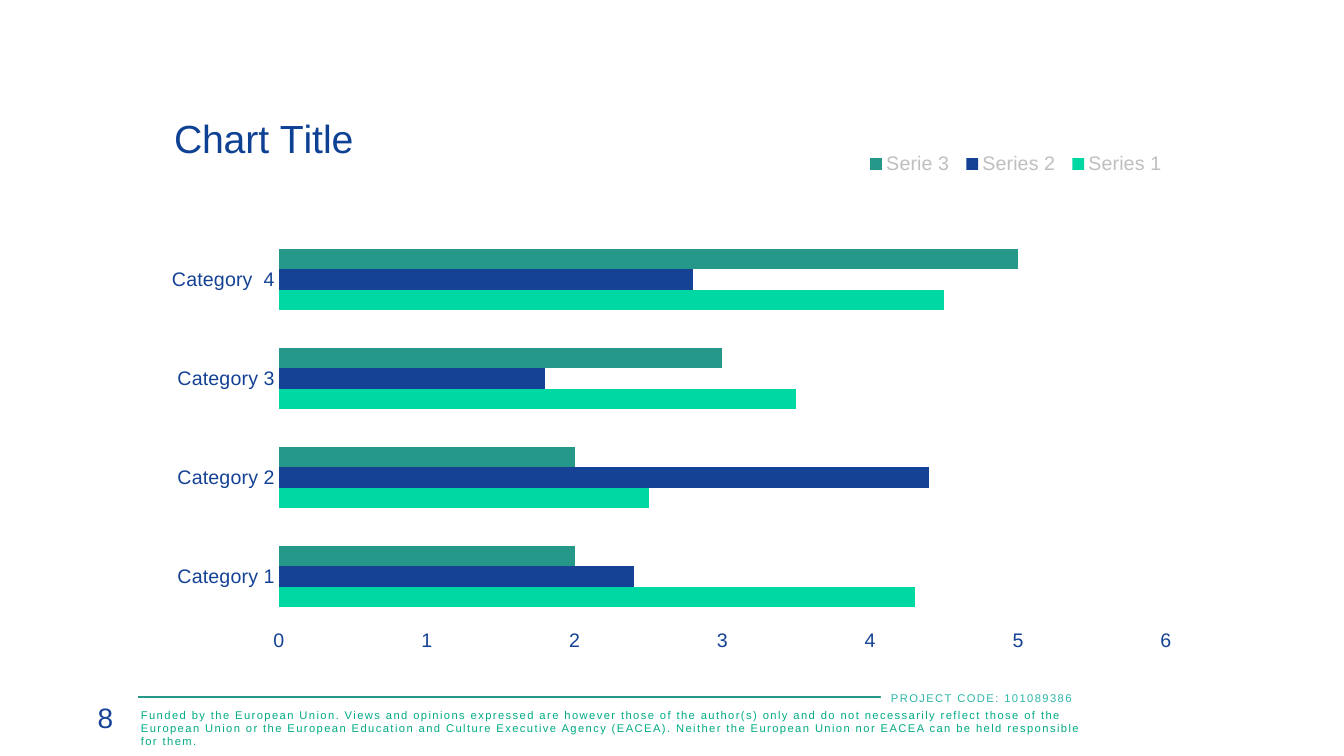
from typing import Any, NamedTuple

from lxml import etree
from pptx import Presentation
from pptx.chart.data import CategoryChartData
from pptx.dml.color import RGBColor
from pptx.enum.chart import XL_CHART_TYPE, XL_LEGEND_POSITION, XL_TICK_MARK
from pptx.enum.shapes import MSO_CONNECTOR, MSO_SHAPE
from pptx.enum.text import MSO_ANCHOR, PP_ALIGN
from pptx.oxml.ns import qn
from pptx.util import Emu, Pt

BAR = XL_CHART_TYPE.BAR_CLUSTERED
TOP = XL_LEGEND_POSITION.TOP
NO_TICK = XL_TICK_MARK.NONE
LINE = MSO_CONNECTOR.STRAIGHT
RECT = MSO_SHAPE.RECTANGLE
HIGH = MSO_ANCHOR.TOP
LEFT, RIGHT = PP_ALIGN.LEFT, PP_ALIGN.RIGHT

WHITE = RGBColor(0xFF, 0xFF, 0xFF)
NAVY = RGBColor(0x15, 0x42, 0x95)
BLUE = RGBColor(0x0E, 0x41, 0x94)
MINT = RGBColor(0x00, 0xD8, 0xA4)
TEAL = RGBColor(0x25, 0x98, 0x89)
GREEN = RGBColor(0x00, 0xAB, 0x84)
AQUA = RGBColor(0x2C, 0xB6, 0xA6)
GREY = RGBColor(0xBF, 0xBF, 0xBF)
FACE = "Arial"


class Box(NamedTuple):
    x: int
    y: int
    w: int
    h: int


class Note(NamedTuple):
    box: Box
    text: str
    size: int
    color: RGBColor
    align: PP_ALIGN = LEFT
    track: int = 0
    fill: RGBColor | None = None
    lead: float = 1.0
    after: int = 0


class Row(NamedTuple):
    name: str
    vals: tuple[float, ...]
    color: RGBColor


FUND = (
    "Funded by the European Union. Views and opinions expressed are however those of "
    "the author(s) only and do not necessarily reflect those of the European Union or "
    "the European Education and Culture Executive Agency (EACEA). Neither the European "
    "Union nor EACEA can be held responsible for them."
)
NOTES = (
    Note(Box(131, 703, 966, 50), FUND, 8, GREEN, track=100),
    Note(Box(27, 696, 96, 44), "8", 20, NAVY, RIGHT),
    Note(Box(881, 685, 225, 24), "PROJECT CODE: 101089386", 8, AQUA,
         track=100, fill=WHITE, lead=1.07, after=6),
)
GROUPS = ("Category 1", "Category 2", "Category 3", "Category  4")
ROWS = (
    Row("Series 1", (4.3, 2.5, 3.5, 4.5), MINT),
    Row("Series 2", (2.4, 4.4, 1.8, 2.8), NAVY),
    Row("Serie 3", (2, 2, 3, 5), TEAL),
)
CHART = Box(151, 98, 1042, 566)
TITLE = Box(167, 107, 180, 46)
KEY = Box(860, 148, 312, 32)
PLOT = Box(279, 230, 887, 396)


def px(n: int) -> Emu:
    return Emu(round(n * 914400 / 100.8))


def style(font: Any, size: int, color: RGBColor) -> None:
    font.name = FACE
    font.size = Pt(size)
    font.bold = False
    font.color.rgb = color


def rule(slide: Any) -> None:
    y = px(697)
    line = slide.shapes.add_connector(LINE, px(138), y, px(1064), y)
    line.line.color.rgb = TEAL
    line.line.width = Pt(0.75)
    etree.SubElement(line._element.spPr, qn("a:effectLst"))


def write(slide: Any, note: Note) -> None:
    place = [px(n) for n in note.box]
    if note.fill is None:
        shape = slide.shapes.add_textbox(*place)
    else:
        shape = slide.shapes.add_shape(RECT, *place)
        shape.shadow.inherit = False
        shape.fill.solid()
        shape.fill.fore_color.rgb = note.fill
        shape.line.fill.background()
    frame = shape.text_frame
    frame.word_wrap = True
    frame.vertical_anchor = HIGH
    para = frame.paragraphs[0]
    para.alignment = note.align
    para.line_spacing = note.lead
    para.space_after = Pt(note.after)
    run = para.add_run()
    run.text = note.text
    style(run.font, note.size, note.color)
    if note.track:
        run._r.get_or_add_rPr().set("spc", str(note.track))


def pin(part: Any, box: Box, prior: str = "", inner: bool = False,
        sized: bool = True) -> None:
    for old in part.findall(qn("c:layout")):
        part.remove(old)
    layout = etree.Element(qn("c:layout"))
    manual = etree.SubElement(layout, qn("c:manualLayout"))
    items = [("layoutTarget", "inner")] if inner else []
    items += [("xMode", "edge"), ("yMode", "edge")]
    items += [("x", (box.x - CHART.x) / CHART.w), ("y", (box.y - CHART.y) / CHART.h)]
    if sized:
        items += [("w", box.w / CHART.w), ("h", box.h / CHART.h)]
    for tag, val in items:
        etree.SubElement(manual, qn(f"c:{tag}")).set("val", str(val))
    if prior:
        part.find(qn(prior)).addnext(layout)
    else:
        part.insert(0, layout)


def plot(slide: Any) -> None:
    data = CategoryChartData()
    data.categories = GROUPS
    for row in ROWS:
        data.add_series(row.name, row.vals)
    chart = slide.shapes.add_chart(BAR, *[px(n) for n in CHART], data).chart
    style(chart.font, 10, WHITE)

    chart.has_title = True
    title = chart.chart_title
    run = title.text_frame.paragraphs[0].add_run()
    run.text = "Chart Title"
    style(run.font, 28, BLUE)
    pin(title._element, TITLE, "c:tx", sized=False)

    chart.has_legend = True
    key = chart.legend
    key.position = TOP
    key.include_in_layout = False
    style(key.font, 14, GREY)
    pin(key._element, KEY, "c:legendPos")

    bars = chart.plots[0]
    bars.gap_width = 182
    bars.overlap = 0
    bars.vary_by_categories = False
    for series, row in zip(bars.series, ROWS):
        series.format.fill.solid()
        series.format.fill.fore_color.rgb = row.color
        series.invert_if_negative = False

    for axis in (chart.category_axis, chart.value_axis):
        axis.major_tick_mark = NO_TICK
        axis.minor_tick_mark = NO_TICK
        style(axis.tick_labels.font, 14, NAVY)
    scale = chart.value_axis
    scale.minimum_scale = 0
    scale.maximum_scale = 6
    scale.major_unit = 1
    scale.has_major_gridlines = True
    scale.format.line.fill.background()
    for line in (chart.category_axis.format.line, scale.major_gridlines.format.line):
        line.color.rgb = WHITE
        line.width = Pt(0.75)
    pin(chart._chartSpace.chart.plotArea, PLOT, inner=True)


def main() -> None:
    deck = Presentation()
    deck.slide_width = px(1344)
    deck.slide_height = px(756)
    slide = deck.slides.add_slide(deck.slide_layouts[6])
    rule(slide)
    for note in NOTES:
        write(slide, note)
    plot(slide)
    deck.save("out.pptx")


if __name__ == "__main__":
    main()
